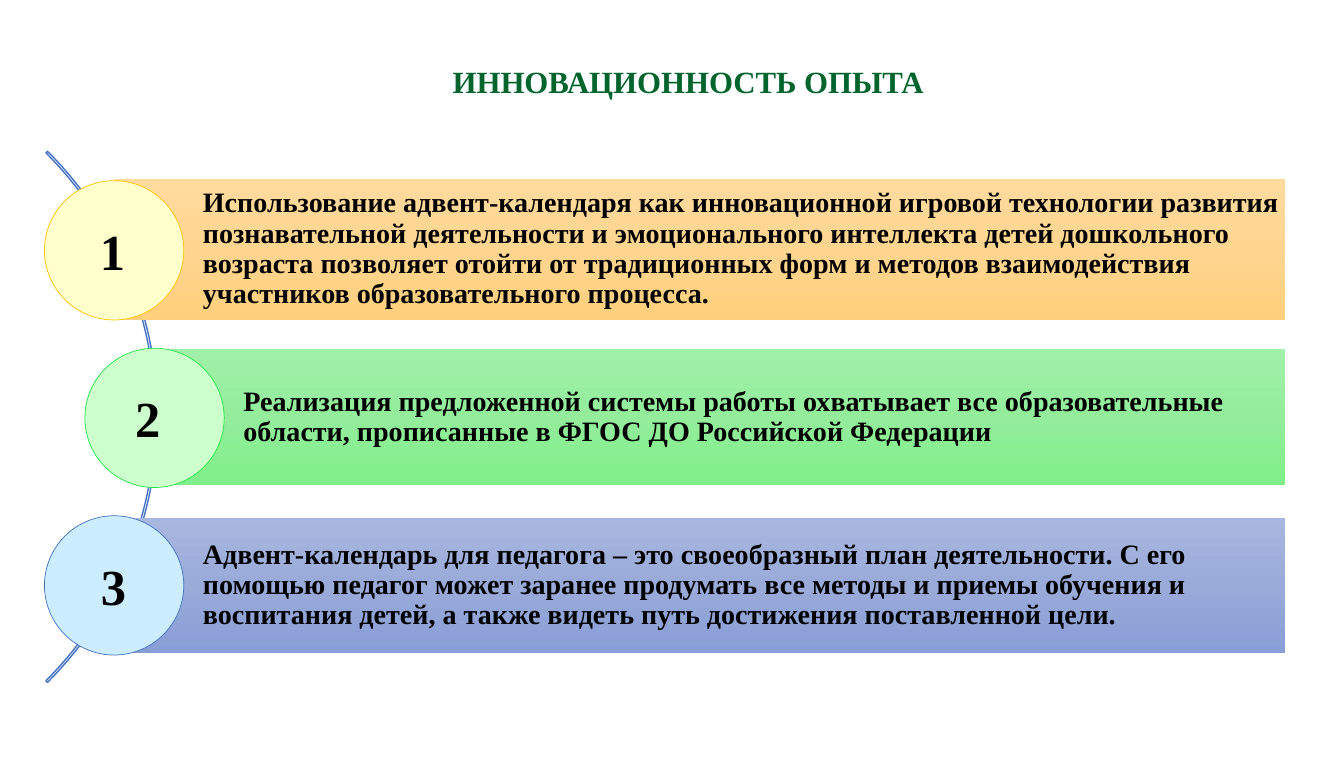
from copy import deepcopy
from pptx import Presentation
from pptx.dml.color import RGBColor
from pptx.enum.shapes import MSO_SHAPE
from pptx.enum.text import MSO_ANCHOR, PP_ALIGN
from pptx.oxml.ns import qn
from pptx.util import Inches, Pt

FONT = "Times New Roman"
BLACK = RGBColor(0x00, 0x00, 0x00)
TITLE_GREEN = RGBColor(0x00, 0x64, 0x2D)
BLUE = RGBColor(0x44, 0x72, 0xC4)
YELLOW_PALE = RGBColor(0xFF, 0xFF, 0xCC)
YELLOW_LINE = RGBColor(0xFF, 0xC0, 0x00)
GREEN_PALE = RGBColor(0xCC, 0xFF, 0xCC)
GREEN_LINE = RGBColor(0x23, 0xE1, 0x48)
BLUE_PALE = RGBColor(0xCC, 0xEC, 0xFF)
ORANGE_BAR = [RGBColor(0xFF, 0xDB, 0x9E), RGBColor(0xFF, 0xD5, 0x90), RGBColor(0xFF, 0xD0, 0x7C)]
GREEN_BAR = [RGBColor(0xA1, 0xF0, 0xA9), RGBColor(0x93, 0xED, 0x9B), RGBColor(0x7F, 0xEF, 0x89)]
BLUE_BAR = [RGBColor(0xA8, 0xB7, 0xDF), RGBColor(0x9A, 0xAB, 0xD9), RGBColor(0x88, 0x9E, 0xD7)]

CIRCLE = 1.38
BAR_RIGHT = 12.73

ROWS = [
    dict(left=0.44, bar_top=1.77, bar_height=1.4, number_dx=0.45,
         bar=ORANGE_BAR, fill=YELLOW_PALE, line=YELLOW_LINE,
         text="Использование адвент-календаря как инновационной игровой технологии развития "
              "познавательной деятельности и эмоционального интеллекта детей дошкольного "
              "возраста позволяет отойти от традиционных форм и методов взаимодействия "
              "участников образовательного процесса."),
    dict(left=0.84, bar_top=3.46, bar_height=1.35, number_dx=0.4,
         bar=GREEN_BAR, fill=GREEN_PALE, line=GREEN_LINE,
         text="Реализация предложенной системы работы охватывает все образовательные "
              "области, прописанные в ФГОС ДО Российской Федерации"),
    dict(left=0.44, bar_top=5.13, bar_height=1.34, number_dx=0.46,
         bar=BLUE_BAR, fill=BLUE_PALE, line=BLUE,
         text="Адвент-календарь для педагога – это своеобразный план деятельности. С его "
              "помощью педагог может заранее продумать все методы и приемы обучения и "
              "воспитания детей, а также видеть путь достижения поставленной цели."),
]


def write(tf, text, size, color=BLACK, align=PP_ALIGN.LEFT, anchor=MSO_ANCHOR.TOP,
          spacing=1.0, insets=(0.1, 0.05, 0.1, 0.05)):
    tf.word_wrap = True
    tf.vertical_anchor = anchor
    tf.margin_left, tf.margin_top, tf.margin_right, tf.margin_bottom = map(Inches, insets)
    p = tf.paragraphs[0]
    p.alignment = align
    p.line_spacing = spacing
    r = p.add_run()
    r.text = text
    r.font.name = FONT
    r.font.size = Pt(size)
    r.font.bold = True
    r.font.color.rgb = color


def add_shape(s, kind, x, y, w, h, line=None, width=0.5):
    sp = s.shapes.add_shape(kind, Inches(x), Inches(y), Inches(w), Inches(h))
    sp.shadow.inherit = False
    if line is None:
        sp.line.fill.background()
    else:
        sp.line.color.rgb = line
        sp.line.width = Pt(width)
    return sp


def fill_gradient(sp, colors):
    sp.fill.gradient()
    sp.fill.gradient_angle = 270
    stops = sp._element.spPr.find(".//" + qn("a:gsLst"))
    stops.insert(1, deepcopy(stops[0]))
    for i, (stop, color) in enumerate(zip(sp.fill.gradient_stops, colors)):
        stop.position = i / 2
        stop.color.rgb = color


def add_title(s, x, y, w, h):
    title = s.shapes.title
    title.left, title.top, title.width, title.height = map(Inches, (x, y, w, h))
    write(title.text_frame, "ИННОВАЦИОННОСТЬ ОПЫТА", 22, color=TITLE_GREEN,
          align=PP_ALIGN.CENTER, spacing=0.9, insets=(0, 0, 0, 0))


def add_arc(s, x, y, size):
    arc = add_shape(s, MSO_SHAPE.BLOCK_ARC, x, y, size, size, line=BLUE, width=1)
    arc.fill.background()
    for i, value in enumerate((189, 27, 0.003)):
        arc.adjustments[i] = value


def add_row(s, number, y, row):
    x = row["left"]
    bar_left = x + CIRCLE / 2
    bar = add_shape(s, MSO_SHAPE.RECTANGLE, bar_left, row["bar_top"],
                    BAR_RIGHT - bar_left, row["bar_height"])
    fill_gradient(bar, row["bar"])
    write(bar.text_frame, row["text"], 20, anchor=MSO_ANCHOR.MIDDLE,
          spacing=0.9, insets=(0.88, 0.06, 0.06, 0.06))
    circle = add_shape(s, MSO_SHAPE.OVAL, x, y, CIRCLE, CIRCLE, line=row["line"])
    circle.fill.solid()
    circle.fill.fore_color.rgb = row["fill"]
    label = s.shapes.add_textbox(Inches(x + row["number_dx"]), Inches(y + 0.34),
                                 Inches(0.9), Inches(0.71))
    write(label.text_frame, str(number), 36)


def main():
    prs = Presentation()
    prs.slide_width, prs.slide_height = Inches(13.31), Inches(7.5)
    s = prs.slides.add_slide(prs.slide_layouts[5])
    add_title(s, 0.66, 0.66, 12.31, 0.33)
    add_arc(s, -5.88, 0.41, 7.44)
    for i, row in enumerate(ROWS):
        add_row(s, i + 1, 1.79 + 1.66 * i, row)
    prs.save("out.pptx")


if __name__ == "__main__":
    main()
